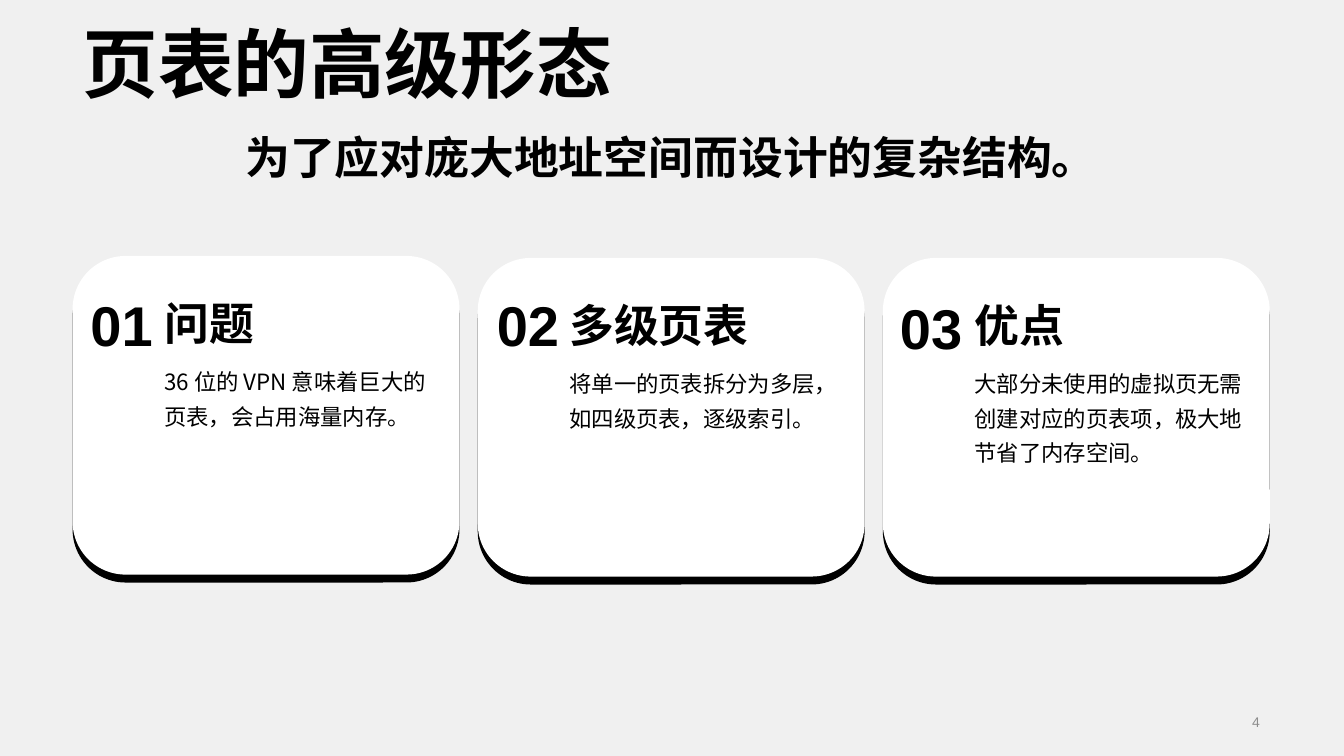
from pptx import Presentation
from pptx.dml.color import RGBColor
from pptx.enum.shapes import MSO_SHAPE
from pptx.enum.text import MSO_ANCHOR, PP_ALIGN
from pptx.oxml.ns import qn
from pptx.util import Cm, Pt

CJK, LATIN = "Noto Sans CJK SC", "Arial"
LEFT, FULL_W = 1.83, 30.18
CARD_W, CARD_H, PITCH = 9.75, 8.03, 10.21
TEXT_DX, TEXT_W = 2.06, 7.39

# card top, number left, number top, number, heading, body
CARDS = [
    (6.45, 2.03, 6.91, "01", "问题", "36 位的 VPN 意味着巨大的页表，会占用海量内存。"),
    (6.5, 12.27, 6.91, "02", "多级页表", "将单一的页表拆分为多层，如四级页表，逐级索引。"),
    (6.5, 22.43, 6.99, "03", "优点",
     "大部分未使用的虚拟页无需创建对应的页表项，极大地节省了内存空间。"),
]


def rgb(hex_color):
    return RGBColor.from_string(hex_color)


def add_text(slide, text, x, y, w, h, size, font=CJK, color="000000", bold=False,
             align=PP_ALIGN.LEFT, anchor=MSO_ANCHOR.TOP, right=0.25, spacing=None):
    """Add a one-paragraph text box; right is its right inset in cm."""
    tf = slide.shapes.add_textbox(Cm(x), Cm(y), Cm(w), Cm(h)).text_frame
    tf.word_wrap = True
    tf.margin_right = Cm(right)
    tf.vertical_anchor = anchor
    p = tf.paragraphs[0]
    p.alignment = align
    p.line_spacing = spacing
    r = p.add_run()
    r.text = text
    r.font.size = Pt(size)
    r.font.bold = bold
    r.font.color.rgb = rgb(color)
    r.font.name = font
    ea = r.font._element.makeelement(qn("a:ea"), {"typeface": font})
    r.font._element.find(qn("a:latin")).addnext(ea)


def add_panel(slide, x, y, color):
    sp = slide.shapes.add_shape(MSO_SHAPE.ROUNDED_RECTANGLE,
                                Cm(x), Cm(y), Cm(CARD_W), Cm(CARD_H))
    sp.shadow.inherit = False
    sp.fill.solid()
    sp.fill.fore_color.rgb = rgb(color)
    sp.line.fill.background()


def add_card(slide, x, top, num_x, num_y, number, heading, body):
    """Draw a white card over its black lower edge, with its texts."""
    add_panel(slide, x, top + 0.2, "000000")
    add_panel(slide, x, top, "FFFFFF")
    add_text(slide, heading, x + TEXT_DX, top + 0.91, TEXT_W, 1.57, 32,
             bold=True, anchor=MSO_ANCHOR.BOTTOM)
    add_text(slide, body, x + TEXT_DX, top + 2.49, TEXT_W, 4.65, 16, spacing=1.3)
    add_text(slide, number, num_x, num_y, 1.88, 2.49, 40, font=LATIN,
             bold=True, anchor=MSO_ANCHOR.MIDDLE, right=0)


def main():
    prs = Presentation()
    prs.slide_width, prs.slide_height = Cm(33.87), Cm(19.05)
    s = prs.slides.add_slide(prs.slide_layouts[6])
    s.background.fill.solid()
    s.background.fill.fore_color.rgb = rgb("F0F0F0")

    add_text(s, "页表的高级形态", LEFT, 0.36, FULL_W, 2.49, 54,
             bold=True, anchor=MSO_ANCHOR.BOTTOM)
    add_text(s, "为了应对庞大地址空间而设计的复杂结构。", LEFT, 3.15, FULL_W, 3.07, 32,
             bold=True, align=PP_ALIGN.CENTER)
    for i, card in enumerate(CARDS):
        add_card(s, LEFT + i * PITCH, *card)
    add_text(s, "4", 21.84, 17.81, 10.16, 0.76, 10, font=LATIN, color="8C8C8C",
             align=PP_ALIGN.RIGHT, anchor=MSO_ANCHOR.MIDDLE)
    prs.save("out.pptx")


if __name__ == "__main__":
    main()
